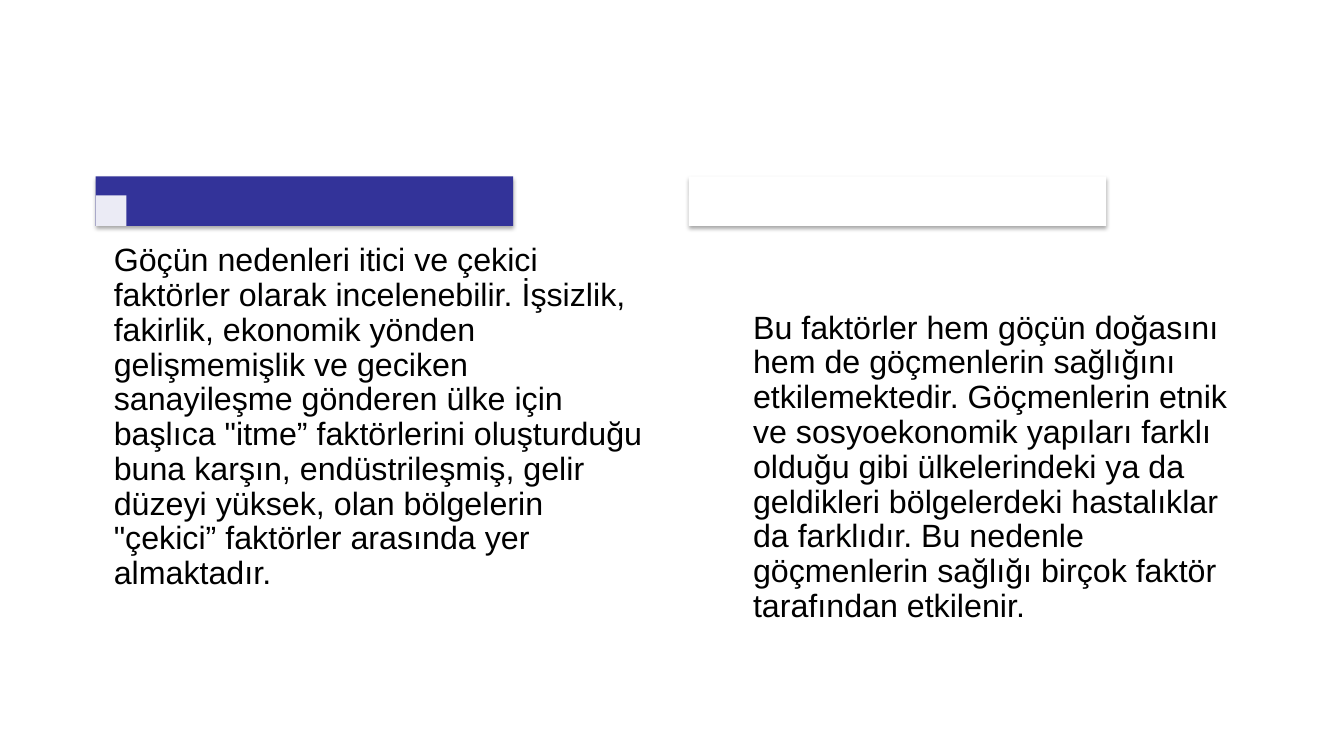
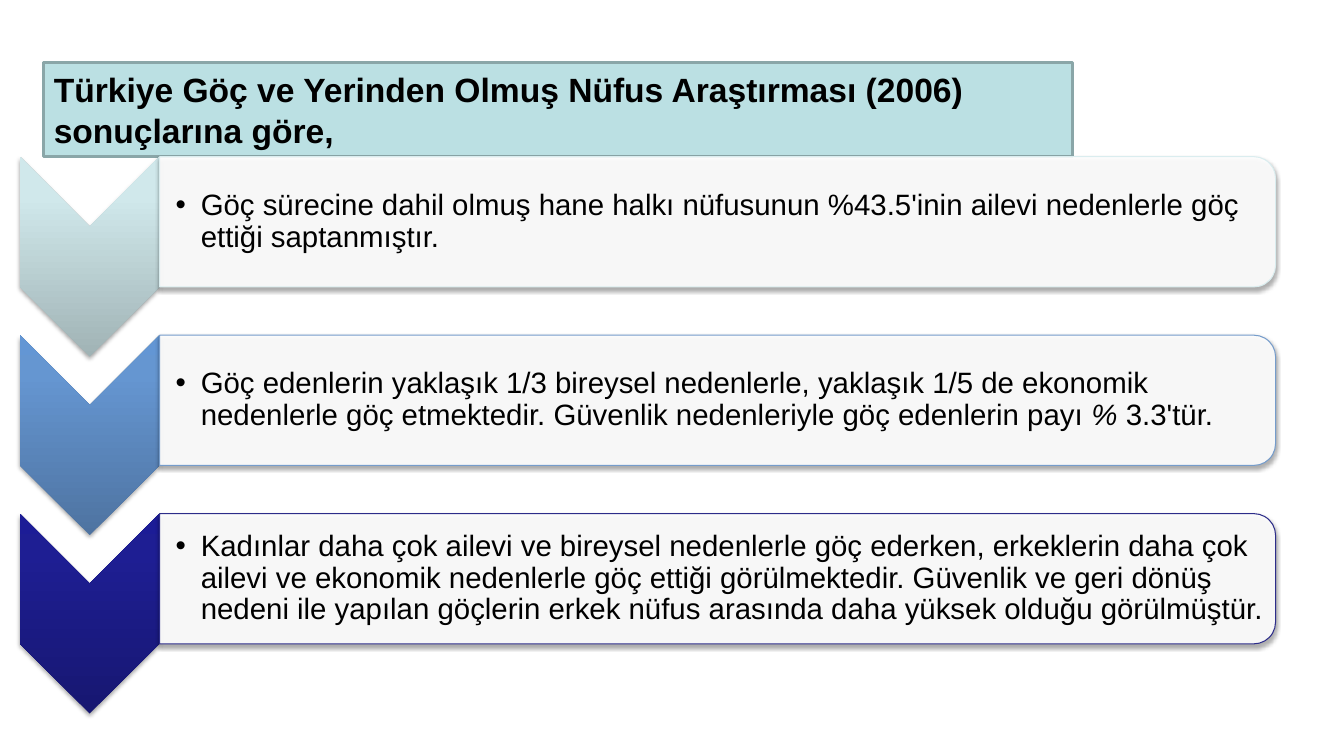
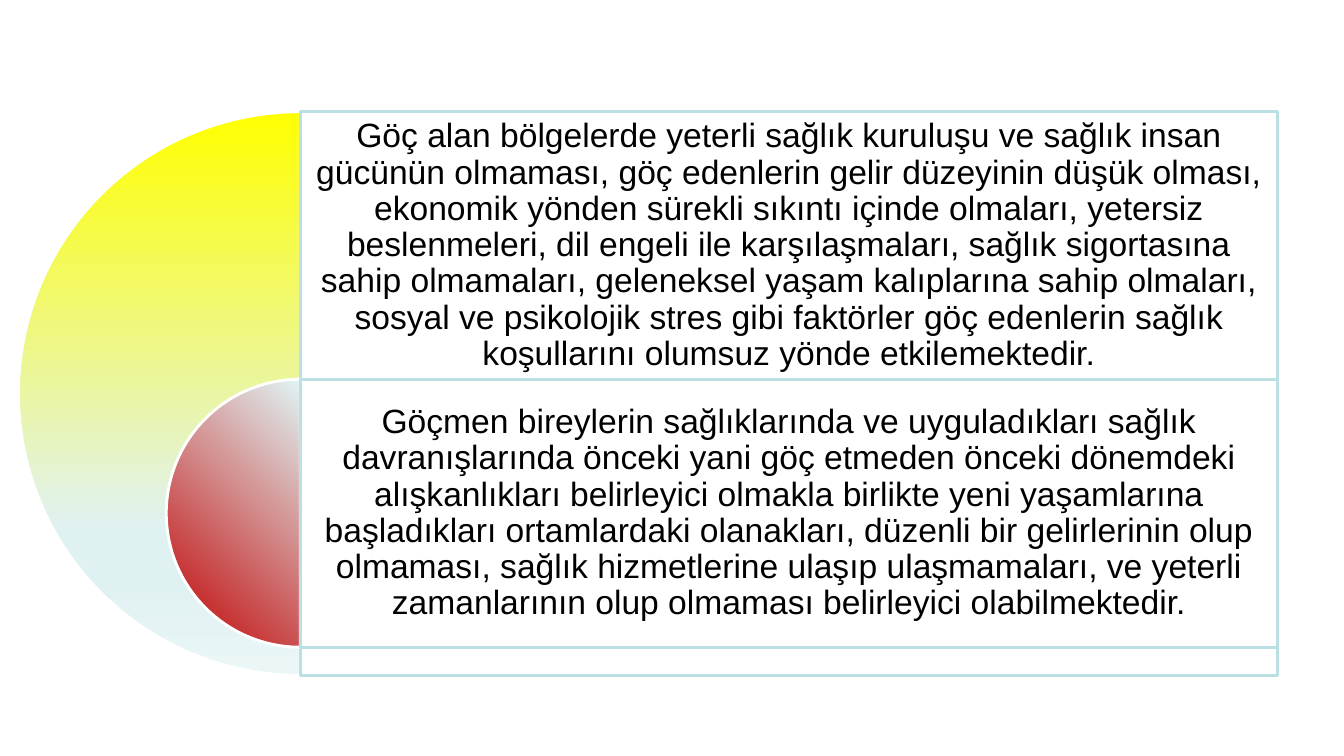
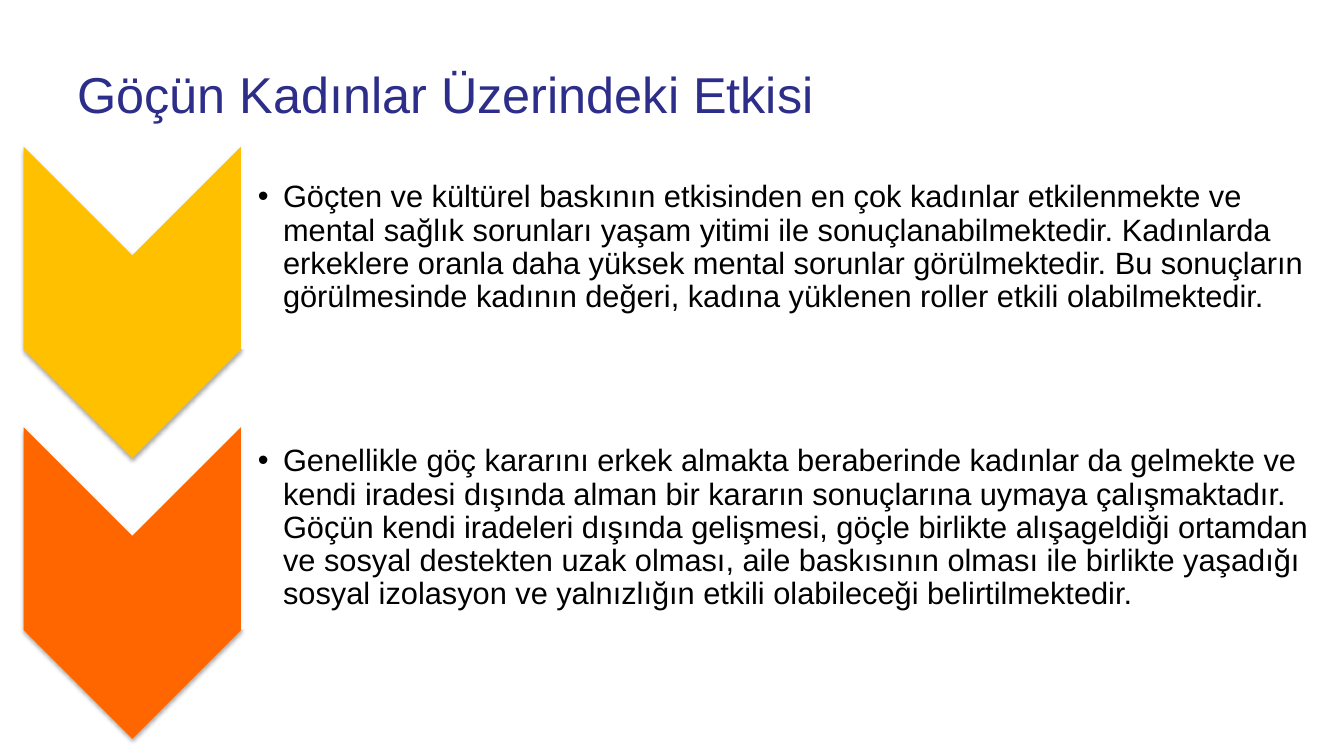
from dataclasses import dataclass

from lxml.etree import SubElement
from pptx import Presentation
from pptx.dml.color import RGBColor
from pptx.enum.shapes import MSO_SHAPE
from pptx.enum.text import MSO_ANCHOR, MSO_AUTO_SIZE, PP_ALIGN
from pptx.oxml.ns import qn
from pptx.util import Inches, Pt

RECTANGLE = MSO_SHAPE.RECTANGLE
CHEVRON = MSO_SHAPE.CHEVRON
HALF_ROUND = MSO_SHAPE.ROUND_2_SAME_RECTANGLE
PIE = MSO_SHAPE.PIE
LEFT, CENTER = PP_ALIGN.LEFT, PP_ALIGN.CENTER

# The slide is a grid of square cells; every length below counts cells.
COLUMNS, ROWS = 160, 90
CELL = Inches(7.5) / ROWS
TWO_CONTENT, COMPARISON = 3, 4


@dataclass(frozen=True)
class Theme:
    font: str = "Arial"
    ink: str = "000000"
    paper: str = "FFFFFF"
    navy: str = "2D2D8A"
    bar: str = "333399"
    aqua: str = "BBE0E3"
    aqua_edge: str = "8AA6A8"
    amber: str = "FFC000"
    orange: str = "FF6600"
    veil: int = 90
    title_size: int = 36
    banner_size: int = 24
    column_size: int = 23
    list_size: int = 21
    wide_list_size: int = 22
    panel_size: int = 24
    thin_line: float = 0.75
    thick_line: float = 2


THEME = Theme()
PIE_TAIL = ((74, "E0F1F2"), (83, "E0F1F2"), (100, "EBF6F7"))


@dataclass(frozen=True)
class Gradient:
    stops: tuple
    angle: int


@dataclass(frozen=True)
class ChevronGrid:
    left: float
    top: float
    chevron_width: float
    chevron_height: float
    panel_width: float
    panel_height: float
    pitch: float
    margin: float
    insets: tuple
    text_size: int


def cells(count):
    return round(count * CELL)


def place(box, left, top, width, height):
    box.left, box.top = cells(left), cells(top)
    box.width, box.height = cells(width), cells(height)


def fill_gradient(shape, gradient):
    shape.fill.gradient()
    shape.fill.gradient_angle = 360 - gradient.angle
    element = shape._element.spPr.find(qn("a:gradFill"))
    element.set("rotWithShape", "0")
    stop_list = element.find(qn("a:gsLst"))
    for stop in list(stop_list):
        stop_list.remove(stop)
    for position, color in gradient.stops:
        stop = SubElement(stop_list, qn("a:gs"), pos=str(position * 1000))
        SubElement(stop, qn("a:srgbClr"), val=color)


def fill_solid(shape, color, opacity=100):
    shape.fill.solid()
    shape.fill.fore_color.rgb = RGBColor.from_string(color)
    if opacity < 100:
        element = shape._element.spPr.find(qn("a:solidFill")).find(qn("a:srgbClr"))
        SubElement(element, qn("a:alpha"), val=str(opacity * 1000))


def outline(shape, color, width):
    shape.line.color.rgb = RGBColor.from_string(color)
    shape.line.width = Pt(width)


def cast_shadow(shape):
    effects = shape._element.spPr.find(qn("a:effectLst"))
    shadow = SubElement(effects, qn("a:outerShdw"), blurRad=str(Pt(3.1)),
                        dist=str(Pt(1.8)), dir="5400000", rotWithShape="0")
    color = SubElement(shadow, qn("a:srgbClr"), val=THEME.ink)
    SubElement(color, qn("a:alpha"), val="35000")


def add_figure(page, kind, area, fill, opacity=100, line=None,
               line_width=THEME.thick_line, shadow=False, turned=False):
    """Draw a preset shape; a turned one is rotated by 90 degrees to fill the area."""
    left, top, width, height = area
    if turned:
        shift = (width - height) / 2
        left, top, width, height = left + shift, top - shift, height, width
    shape = page.shapes.add_shape(kind, 0, 0, 0, 0)
    place(shape, left, top, width, height)
    shape.rotation = 90 if turned else 0
    shape.shadow.inherit = False
    if isinstance(fill, Gradient):
        fill_gradient(shape, fill)
    else:
        fill_solid(shape, fill, opacity)
    if line:
        outline(shape, line, line_width)
    else:
        shape.line.fill.background()
    if shadow:
        cast_shadow(shape)
    return shape


def set_frame(box, insets):
    frame = box.text_frame
    frame.word_wrap = True
    frame.auto_size = MSO_AUTO_SIZE.NONE
    frame.vertical_anchor = MSO_ANCHOR.MIDDLE
    (frame.margin_left, frame.margin_top,
     frame.margin_right, frame.margin_bottom) = map(cells, insets)
    return frame


def style_span(span, size, color=THEME.ink, bold=False, italic=False):
    font = span.font
    font.name, font.size, font.bold, font.italic = THEME.font, Pt(size), bold, italic
    font.color.rgb = RGBColor.from_string(color)


def set_title(page, text, area, size, color=THEME.ink, bold=False):
    title = page.shapes.title
    place(title, *area)
    para = set_frame(title, (1.2, 0.6, 1.2, 0.6)).paragraphs[0]
    para.text = text
    para.alignment = LEFT
    style_span(para.runs[0], size, color, bold)
    return title


def set_body(page, box, text, area, size, insets, align=LEFT, bullet=False):
    """Fill a body placeholder and bring it to the front; *stars* mark italics."""
    page.shapes._spTree.append(box._element)
    place(box, *area)
    para = set_frame(box, insets).paragraphs[0]
    properties = para._p.get_or_add_pPr()
    hanging = Inches(0.25) if bullet else 0
    properties.set("marL", str(hanging))
    properties.set("indent", str(-hanging))
    if bullet:
        SubElement(properties, qn("a:buChar"), char="•")
    else:
        SubElement(properties, qn("a:buNone"))
    para.alignment = align
    para.line_spacing = 0.9
    para.space_before = Pt(0)
    for index, piece in enumerate(text.split("*")):
        span = para.add_run()
        span.text = piece
        style_span(span, size, italic=index % 2 == 1)


def add_page(deck, layout):
    """Return a new slide and its body placeholders in order."""
    page = deck.slides.add_slide(deck.slide_layouts[layout])
    bodies = [box for box in page.placeholders if box.placeholder_format.idx > 0]
    return page, bodies


def drop(*boxes):
    for box in boxes:
        box._element.getparent().remove(box._element)


def add_chevron_list(page, bodies, grid, items):
    """Stack rows of a chevron and a bulleted panel: (fill, panel line, text)."""
    panel_left = grid.left + grid.chevron_width
    for row, (body, (fill, line, text)) in enumerate(zip(bodies, items)):
        top = grid.top + row * grid.pitch
        add_figure(page, CHEVRON,
                   (grid.left, top, grid.chevron_width, grid.chevron_height),
                   fill, shadow=True, turned=True)
        add_figure(page, HALF_ROUND,
                   (panel_left, top, grid.panel_width, grid.panel_height),
                   THEME.paper, THEME.veil, line, THEME.thin_line,
                   shadow=line is not None, turned=True)
        area = (panel_left, top + grid.margin, grid.panel_width - grid.margin,
                grid.panel_height - 2 * grid.margin)
        set_body(page, body, text, area, grid.text_size, grid.insets, bullet=True)


def build_causes(deck):
    page, bodies = add_page(deck, TWO_CONTENT)
    drop(page.shapes.title)
    bar_top, bar_width, bar_height, square = 21, 49.7, 5.9, 3.65
    columns = (
        (11.4, THEME.bar, (11.4, 29.3, 68.1, 40.9),
         "Göçün nedenleri itici ve çekici faktörler olarak incelenebilir. İşsizlik, "
         "fakirlik, ekonomik yönden gelişmemişlik ve geciken sanayileşme gönderen "
         "ülke için başlıca \"itme” faktörlerini oluşturduğu buna karşın, "
         "endüstrileşmiş, gelir düzeyi yüksek, olan bölgelerin \"çekici” faktörler "
         "arasında yer almaktadır."),
        (82, THEME.paper, (87.5, 28.3, 65, 54.8),
         "Bu faktörler hem göçün doğasını hem de göçmenlerin sağlığını "
         "etkilemektedir. Göçmenlerin etnik ve sosyoekonomik yapıları farklı olduğu "
         "gibi ülkelerindeki ya da geldikleri bölgelerdeki hastalıklar da farklıdır. "
         "Bu nedenle göçmenlerin sağlığı birçok faktör tarafından etkilenir."),
    )
    for body, (left, color, area, text) in zip(bodies, columns):
        add_figure(page, RECTANGLE, (left, bar_top, bar_width, bar_height), color,
                   shadow=True)
        add_figure(page, RECTANGLE,
                   (left, bar_top + bar_height - square, square, square),
                   THEME.paper, THEME.veil)
        set_body(page, body, text, area, THEME.column_size, (2.15,) * 4)


def build_survey(deck):
    page, bodies = add_page(deck, COMPARISON)
    banner = set_title(
        page, "Türkiye Göç ve Yerinden Olmuş Nüfus Araştırması (2006) sonuçlarına göre,",
        (5.2, 7.45, 122.5, 11.15), THEME.banner_size, bold=True)
    geometry = SubElement(banner._element.spPr, qn("a:prstGeom"), prst="roundRect")
    SubElement(geometry, qn("a:avLst"))
    fill_solid(banner, THEME.aqua)
    outline(banner, THEME.aqua_edge, THEME.thick_line)

    def shade(dark, middle, light):
        return Gradient(((0, dark), (80, middle), (100, light)), 270)

    grid = ChevronGrid(left=2.35, top=18.65, chevron_width=16.65, chevron_height=23.8,
                       panel_width=132.85, panel_height=15.5, pitch=21.25, margin=0.75,
                       insets=(1.9, 0.1, 0.1, 0.1), text_size=THEME.list_size)
    add_chevron_list(page, bodies, grid, (
        (shade("A0B3B5", "D0E8EB", "D1EAEC"), "DAEDEF",
         "Göç sürecine dahil olmuş hane halkı nüfusunun %43.5'inin ailevi nedenlerle "
         "göç ettiği saptanmıştır."),
        (shade("4E73A1", "6596D1", "6396D4"), "759CCB",
         "Göç edenlerin yaklaşık 1/3 bireysel nedenlerle, yaklaşık 1/5 de ekonomik "
         "nedenlerle göç etmektedir. Güvenlik nedenleriyle göç edenlerin payı "
         "*% *3.3'tür."),
        (shade("171771", "1E1E93", "1C1C96"), THEME.navy,
         "Kadınlar daha çok ailevi ve bireysel nedenlerle göç ederken, erkeklerin daha "
         "çok ailevi ve ekonomik nedenlerle göç ettiği görülmektedir. Güvenlik ve geri "
         "dönüş nedeni ile yapılan göçlerin erkek nüfus arasında daha yüksek olduğu "
         "görülmüştür."),
    ))
    drop(*bodies[3:])


def build_health(deck):
    page, bodies = add_page(deck, TWO_CONTENT)
    drop(page.shapes.title)
    axis, panel_width, text_height = 35.75, 116.3, 31.9
    layers = (
        (13.3, 67.1, "FFFF00", 90,
         "Göç alan bölgelerde yeterli sağlık kuruluşu ve sağlık insan gücünün olmaması, "
         "göç edenlerin gelir düzeyinin düşük olması, ekonomik yönden sürekli sıkıntı "
         "içinde olmaları, yetersiz beslenmeleri, dil engeli ile karşılaşmaları, sağlık "
         "sigortasına sahip olmamaları, geleneksel yaşam kalıplarına sahip olmaları, "
         "sosyal ve psikolojik stres gibi faktörler göç edenlerin sağlık koşullarını "
         "olumsuz yönde etkilemektedir."),
        (45.15, text_height, "C00000", 315,
         "Göçmen bireylerin sağlıklarında ve uyguladıkları sağlık davranışlarında önceki "
         "yani göç etmeden önceki dönemdeki alışkanlıkları belirleyici olmakla birlikte "
         "yeni yaşamlarına başladıkları ortamlardaki olanakları, düzenli bir gelirlerinin "
         "olup olmaması, sağlık hizmetlerine ulaşıp ulaşmamaları, ve yeterli zamanlarının "
         "olup olmaması belirleyici olabilmektedir."),
    )
    for body, (top, size, color, angle, text) in zip(bodies, layers):
        half_disc = add_figure(page, PIE, (axis - size / 2, top, size, size),
                               Gradient(((0, color),) + PIE_TAIL, angle),
                               line=THEME.paper)
        half_disc.adjustments[0], half_disc.adjustments[1] = 54, 162
        add_figure(page, RECTANGLE, (axis, top, panel_width, size), THEME.paper,
                   THEME.veil, line=THEME.aqua)
        set_body(page, body, text, (axis, top, panel_width, text_height),
                 THEME.panel_size, (1.2,) * 4, CENTER)


def build_women(deck):
    page, bodies = add_page(deck, TWO_CONTENT)
    set_title(page, "Göçün Kadınlar Üzerindeki Etkisi", (8, 3.6, 144, 15),
              THEME.title_size, THEME.navy)
    grid = ChevronGrid(left=2.8, top=17.45, chevron_width=25.9, chevron_height=37.1,
                       panel_width=128.9, panel_height=24.1, pitch=33.4, margin=1.2,
                       insets=(2, 0.2, 0.2, 0.2), text_size=THEME.wide_list_size)
    add_chevron_list(page, bodies, grid, (
        (THEME.amber, None,
         "Göçten ve kültürel baskının etkisinden en çok kadınlar etkilenmekte ve mental "
         "sağlık sorunları yaşam yitimi ile sonuçlanabilmektedir. Kadınlarda erkeklere "
         "oranla daha yüksek mental sorunlar görülmektedir. Bu sonuçların görülmesinde "
         "kadının değeri, kadına yüklenen roller etkili olabilmektedir."),
        (THEME.orange, None,
         "Genellikle göç kararını erkek almakta beraberinde kadınlar da gelmekte ve kendi "
         "iradesi dışında alman bir kararın sonuçlarına uymaya çalışmaktadır. Göçün kendi "
         "iradeleri dışında gelişmesi, göçle birlikte alışageldiği ortamdan ve sosyal "
         "destekten uzak olması, aile baskısının olması ile birlikte yaşadığı sosyal "
         "izolasyon ve yalnızlığın etkili olabileceği belirtilmektedir."),
    ))


def main():
    deck = Presentation()
    deck.slide_width, deck.slide_height = cells(COLUMNS), cells(ROWS)
    for build in (build_causes, build_survey, build_health, build_women):
        build(deck)
    deck.save("out.pptx")


if __name__ == "__main__":
    main()
